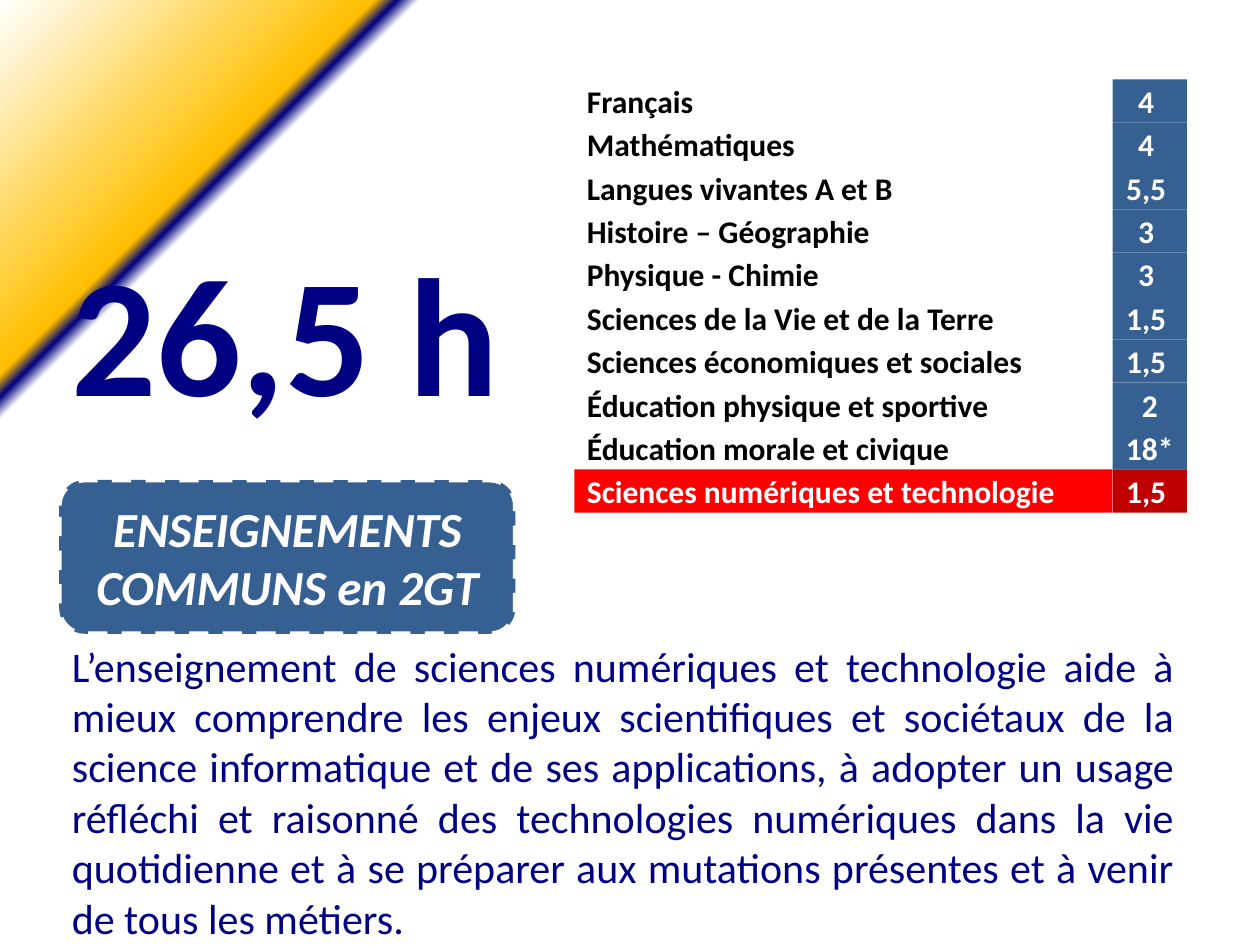
from copy import deepcopy

from pptx import Presentation
from pptx.dml.color import RGBColor
from pptx.enum.dml import MSO_LINE
from pptx.enum.shapes import MSO_SHAPE
from pptx.enum.text import MSO_ANCHOR, MSO_AUTO_SIZE, PP_ALIGN
from pptx.oxml import parse_xml
from pptx.oxml.ns import nsdecls, qn
from pptx.util import Inches, Pt

THEME = {
    "font": "Calibri",
    "navy": "000082", "blue": "376092", "gold": "FFC000", "red": "FF0000",
    "dark red": "C00000", "white": "FFFFFF", "black": "000000",
    "hours": 96, "label": 28, "body": 24, "row": 18,
}

# Grid: left column for the total, right columns for subjects and hours
LEFT, RIGHT = 0.47, 9.42
LEFT_WIDTH = 3.62
SUBJECT_LEFT, HOURS_LEFT = 4.56, 8.83
ROWS_TOP, ROWS_HEIGHT = 0.63, 3.44
LABEL_TOP, BODY_TOP = 3.81, 5.03

SUBJECTS = [
    ("Français", "4 "),
    ("Mathématiques", "4 "),
    ("Langues vivantes A et B", "5,5 "),
    ("Histoire – Géographie", "3 "),
    ("Physique - Chimie", "3 "),
    ("Sciences de la Vie et de la Terre", "1,5 "),
    ("Sciences économiques et sociales", "1,5 "),
    ("Éducation physique et sportive", "2"),
    ("Éducation morale et civique", "18* "),
    ("Sciences numériques et technologie", "1,5 "),
]


def color(name):
    return RGBColor.from_string(THEME[name])


def write(box, text, size, ink, align, **formats):
    para = box.text_frame.paragraphs[0]
    para.alignment = align
    span = para.add_run()
    span.text = text
    formats = {"name": THEME["font"], "size": Pt(THEME[size]), **formats}
    for key, value in formats.items():
        setattr(span.font, key, value)
    span.font.color.rgb = color(ink)
    return para


deck = Presentation()
deck.slide_width, deck.slide_height = Inches(10), Inches(7.5)
page = deck.slides.add_slide(deck.slide_layouts[1])

# Background: gold corner behind a navy diagonal
fill = page.background.fill
fill.gradient()
fill.gradient_angle = 135
stops = [(0, "white"), (0.81, "white"), (0.82, "navy"), (0.83, "gold"), (1, "white")]
stop_list = next(page._element.iter(qn("a:gsLst")))
while len(stop_list) < len(stops):
    stop_list.append(deepcopy(stop_list[0]))
for stop, (position, name) in zip(fill.gradient_stops, stops):
    stop.position = position
    stop.color.rgb = color(name)

# Total hours and description in the placeholders
title, body = page.placeholders
places = [
    (title, (LEFT, 1.76, LEFT_WIDTH, 1.72)),
    (body, (LEFT, BODY_TOP, RIGHT - LEFT, 2.52)),
]
for box, place in places:
    box.left, box.top, box.width, box.height = map(Inches, place)
    frame = box.text_frame
    frame.word_wrap = True
    frame.auto_size = MSO_AUTO_SIZE.SHAPE_TO_FIT_TEXT
    frame.vertical_anchor = MSO_ANCHOR.TOP

write(title, "26,5 h", "hours", "navy", PP_ALIGN.LEFT, bold=True)
para = write(
    body,
    "L’enseignement de sciences numériques et technologie aide à mieux comprendre "
    "les enjeux scientifiques et sociétaux de la science informatique et de ses "
    "applications, à adopter un usage réfléchi et raisonné des technologies "
    "numériques dans la vie quotidienne et à se préparer aux mutations présentes "
    "et à venir de tous les métiers. ",
    "body", "navy", PP_ALIGN.JUSTIFY)
para.space_before = Pt(0)
properties = para._p.get_or_add_pPr()
properties.set("marL", "0")
properties.set("indent", "0")
properties.append(parse_xml(f"<a:buNone {nsdecls('a')}/>"))

# Subjects and weekly hours, the last row highlighted
row_height = ROWS_HEIGHT / len(SUBJECTS)
for row, (subject, hours) in enumerate(SUBJECTS):
    last = row == len(SUBJECTS) - 1
    subject_fill, subject_ink, hours_fill = (
        ("red", "white", "dark red") if last else ("white", "black", "blue"))
    cells = [
        (subject, SUBJECT_LEFT, HOURS_LEFT, subject_fill, subject_ink, PP_ALIGN.LEFT),
        (hours, HOURS_LEFT, RIGHT, hours_fill, "white", PP_ALIGN.CENTER),
    ]
    for text, left, right, cell_fill, ink, align in cells:
        cell = page.shapes.add_shape(
            MSO_SHAPE.RECTANGLE, Inches(left), Inches(ROWS_TOP + row * row_height),
            Inches(right - left), Inches(row_height))
        cell.shadow.inherit = False
        cell.fill.solid()
        cell.fill.fore_color.rgb = color(cell_fill)
        cell.line.fill.background()
        write(cell, text, "row", ink, align, bold=True)

# Dashed label under the total
label = page.shapes.add_shape(
    MSO_SHAPE.ROUNDED_RECTANGLE, Inches(LEFT), Inches(LABEL_TOP),
    Inches(LEFT_WIDTH), Inches(BODY_TOP - LABEL_TOP))
label.shadow.inherit = False
label.fill.solid()
label.fill.fore_color.rgb = color("blue")
label.line.color.rgb = color("white")
label.line.width = Pt(2.75)
label.line.dash_style = MSO_LINE.DASH
write(label, "ENSEIGNEMENTS COMMUNS en 2GT", "label", "white", PP_ALIGN.CENTER,
      bold=True, italic=True)

deck.save("out.pptx")
